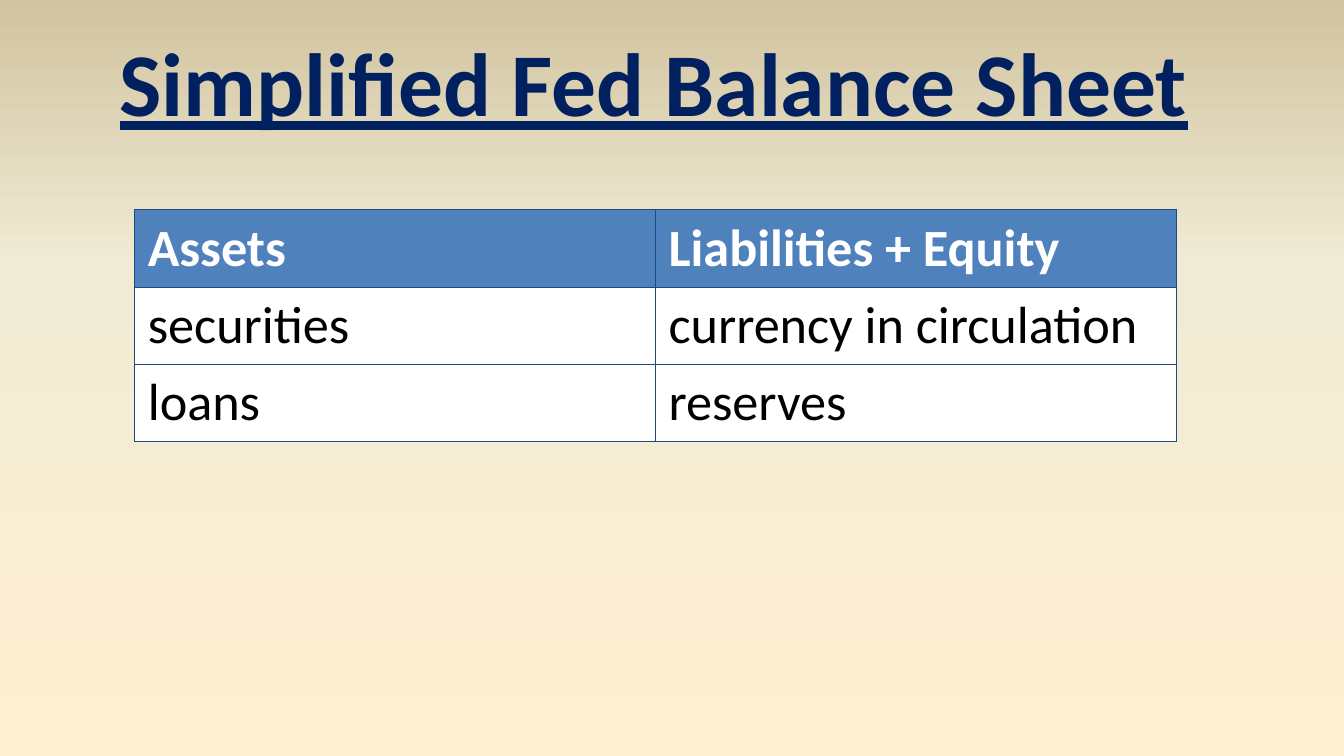
from copy import deepcopy

from lxml import etree
from pptx import Presentation
from pptx import util as u
from pptx.dml.color import RGBColor
from pptx.enum import text
from pptx.oxml import ns

NAVY = RGBColor(0x00, 0x20, 0x60)
BORDER = RGBColor(0x1F, 0x49, 0x7D)
BLUE = RGBColor(0x4F, 0x81, 0xBD)
WHITE = RGBColor(0xFF, 0xFF, 0xFF)
BLACK = RGBColor(0x00, 0x00, 0x00)
BACKGROUND = [
    (0, RGBColor(0xFF, 0xEF, 0xD1)),
    (0.65, RGBColor(0xF0, 0xEB, 0xD5)),
    (1, RGBColor(0xD1, 0xC3, 0x9F)),
]
BALANCE_SHEET = [
    ("Assets", "Liabilities + Equity"),
    ("securities", "currency in circulation"),
    ("loans", "reserves"),
]


def write(para, words, color, **formats):
    span = para.add_run()
    span.text = words
    span.font.color.rgb = color
    for name, value in {"name": "Calibri", **formats}.items():
        setattr(span.font, name, value)


def add_borders(cell):
    properties = cell._tc.get_or_add_tcPr()
    for index, side in enumerate(("lnL", "lnR", "lnT", "lnB")):
        line = etree.Element(ns.qn(f"a:{side}"), w=str(u.Pt(0.5)))
        fill = etree.SubElement(line, ns.qn("a:solidFill"))
        etree.SubElement(fill, ns.qn("a:srgbClr"), val=str(BORDER))
        properties.insert(index, line)


deck = Presentation()
deck.slide_width = u.Inches(10)
deck.slide_height = deck.slide_width * 9 // 16
page = deck.slides.add_slide(deck.slide_layouts[6])

backdrop = page.background.fill
backdrop.gradient()
backdrop.gradient_angle = 90
stop_list = next(page.element.iter(ns.qn("a:gsLst")))
stop_list.append(deepcopy(stop_list[0]))
for stop, (position, color) in zip(backdrop.gradient_stops, BACKGROUND):
    stop.position = position
    stop.color.rgb = color

frame = page.shapes.add_table(
    len(BALANCE_SHEET), 2,
    u.Inches(1), u.Inches(1.56), u.Inches(7.75), u.Inches(1.7))
table = frame.table
for row, entries in enumerate(BALANCE_SHEET):
    header = row == 0
    table.rows[row].height = u.Inches(0.41)
    for column, entry in enumerate(entries):
        cell = table.cell(row, column)
        cell.fill.solid()
        cell.fill.fore_color.rgb = BLUE if header else WHITE
        add_borders(cell)
        write(cell.text_frame.paragraphs[0], entry, WHITE if header else BLACK,
              size=u.Pt(28), bold=header)
frame.height = u.Inches(1.7)

title = page.shapes.add_textbox(
    u.Inches(0.75), u.Inches(0.15), u.Inches(8.23), u.Inches(0.91))
frame_formats = {"word_wrap": False, "auto_size": text.MSO_AUTO_SIZE.SHAPE_TO_FIT_TEXT}
for name, value in frame_formats.items():
    setattr(title.text_frame, name, value)
para = title.text_frame.paragraphs[0]
para.alignment = text.PP_ALIGN.CENTER
write(para, "Simplified Fed Balance Sheet", NAVY,
      size=u.Pt(48), bold=True, underline=True)

deck.save("out.pptx")
